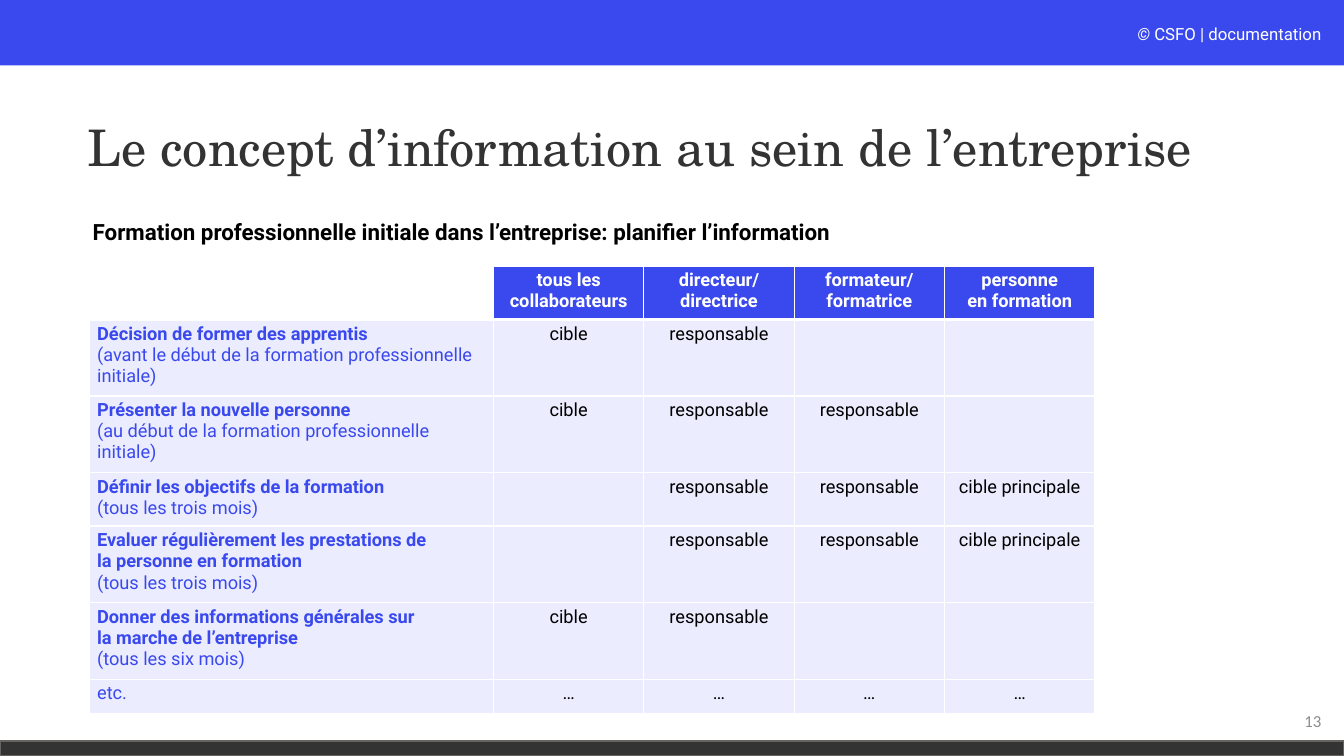
from pptx import Presentation
from pptx import util as u
from pptx.dml.color import RGBColor
from pptx.enum import shapes, text
from pptx.oxml import parse_xml
from pptx.oxml.ns import nsdecls

BLUE = RGBColor(0x3A, 0x49, 0xEE)
PALE = RGBColor(0xEB, 0xEC, 0xFE)
DARK = RGBColor(0x33, 0x33, 0x33)
EDGE = RGBColor(0x66, 0x63, 0x60)
GREY = RGBColor(0x8C, 0x8C, 0x8C)
WHITE = RGBColor(0xFF, 0xFF, 0xFF)
OFF_WHITE = RGBColor(0xFC, 0xFD, 0xFE)
BLACK = RGBColor(0, 0, 0)

LEFT, CENTER, RIGHT = text.PP_ALIGN.LEFT, text.PP_ALIGN.CENTER, text.PP_ALIGN.RIGHT
MIDDLE = text.MSO_ANCHOR.MIDDLE

HEADERS = ["tous les\ncollaborateurs", "directeur/\ndirectrice",
           "formateur/\nformatrice", "personne\nen formation"]
RESP, MAIN = "responsable", "cible principale"
ROWS = [
    ("Décision de former des apprentis",
     "(avant le début de la formation professionnelle initiale)",
     ["cible", RESP, "", ""]),
    ("Présenter la nouvelle personne",
     "(au début de la formation professionnelle initiale)",
     ["cible", RESP, RESP, ""]),
    ("Définir les objectifs de la formation", "(tous les trois mois)",
     ["", RESP, RESP, MAIN]),
    ("Evaluer régulièrement les prestations de\nla personne en formation",
     "(tous les trois mois)", ["", RESP, RESP, MAIN]),
    ("Donner des informations générales sur\nla marche de l’entreprise",
     "(tous les six mois)", ["cible", RESP, "", ""]),
    ("", "etc.", ["…"] * 4),
]
COL_WIDTHS = [288.7] + [107.4] * 4
ROW_HEIGHTS = [38.2, 54.7, 54.7, 38.2, 54.7, 54.7, 24.5]


def write(tf, content, size=13, color=BLACK, bold=False, italic=False,
          font="Roboto", align=LEFT, spacing=None, join=False):
    for line in content.split("\n"):
        p = tf.paragraphs[-1]
        if p.runs and not join:
            p = tf.add_paragraph()
        p.alignment = align
        if spacing:
            p.line_spacing = spacing
        r = p.add_run()
        r.text = line
        r.font.name, r.font.size = font, u.Pt(size)
        r.font.bold, r.font.italic = bold, italic
        r.font.color.rgb = color


class Deck:
    def __init__(self, width, height):
        self.prs = Presentation()
        self.prs.slide_width, self.prs.slide_height = u.Pt(width), u.Pt(height)
        self.s = self.prs.slides.add_slide(self.prs.slide_layouts[6])

    def bar(self, x, y, w, h, fill, line=None):
        sp = self.s.shapes.add_shape(shapes.MSO_SHAPE.RECTANGLE, *map(u.Pt, (x, y, w, h)))
        sp.shadow.inherit = False
        sp.fill.solid()
        sp.fill.fore_color.rgb = fill
        if line:
            sp.line.color.rgb = line
            sp.line.width = u.Pt(1)
        else:
            sp.line.fill.background()

    def box(self, x, y, w, h, content, wrap=True, anchor=None, **fmt):
        tf = self.s.shapes.add_textbox(*map(u.Pt, (x, y, w, h))).text_frame
        tf.word_wrap = wrap
        if anchor is not None:
            tf.vertical_anchor = anchor
        write(tf, content, **fmt)
        return tf

    def cell(self, cell, fill, top=1, bottom=1):
        cell.margin_left = cell.margin_right = u.Pt(5.6)
        cell.margin_top = cell.margin_bottom = u.Pt(2.8)
        tc_pr = cell._tc.get_or_add_tcPr()
        for side, width in zip("LRTB", (1, 1, top, bottom)):
            tc_pr.append(parse_xml(
                f'<a:ln{side} {nsdecls("a")} w="{u.Pt(width)}"><a:solidFill>'
                f'<a:srgbClr val="{WHITE}"/></a:solidFill></a:ln{side}>'))
        if fill is None:
            cell.fill.background()
        else:
            cell.fill.solid()
            cell.fill.fore_color.rgb = fill

    def table(self, x, y, widths, heights):
        frame = self.s.shapes.add_table(
            len(heights), len(widths),
            *map(u.Pt, (x, y, sum(widths), sum(heights))))
        table = frame.table
        table.first_row = table.horz_banding = False
        for col, width in zip(table.columns, widths):
            col.width = u.Pt(width)
        for row, height in zip(table.rows, heights):
            row.height = u.Pt(height)
        return table

    def plan(self, x, y):
        table = self.table(x, y, COL_WIDTHS, ROW_HEIGHTS)
        self.cell(table.cell(0, 0), None, bottom=3)
        for j, header in enumerate(HEADERS, 1):
            c = table.cell(0, j)
            self.cell(c, BLUE, bottom=3)
            write(c.text_frame, header, color=WHITE, bold=True, align=CENTER)
        for i, (step, timing, roles) in enumerate(ROWS, 1):
            for j in range(len(COL_WIDTHS)):
                self.cell(table.cell(i, j), PALE, top=3 if i == 1 else 1)
            tf = table.cell(i, 0).text_frame
            if step:
                write(tf, step, color=BLUE, bold=True)
            write(tf, timing, color=BLUE)
            for j, role in enumerate(roles, 1):
                if role:
                    write(table.cell(i, j).text_frame, role, align=CENTER)


def main():
    d = Deck(960, 540)
    d.bar(0, 0, 960, 46.8, BLUE)
    d.bar(0, 529.2, 960, 10.8, DARK, EDGE)
    tf = d.box(620.6, 13.7, 330.5, 21.6, "© ", size=12, color=OFF_WHITE,
               italic=True, align=RIGHT)
    write(tf, "CSFO | documentation", size=12, color=WHITE, align=RIGHT, join=True)
    d.box(735, 500.4, 216, 28.8, "13", size=12, color=GREY, font="Calibri",
          align=RIGHT, anchor=MIDDLE)
    d.box(55.6, 54.7, 828, 104.4, "Le concept d’information au sein de l’entreprise",
          size=36, color=DARK, font="TeX Gyre Schola", spacing=0.9, anchor=MIDDLE)
    d.plan(63.8, 190)
    d.box(59.2, 152, 583.2, 26.6,
          "Formation professionnelle initiale dans l’entreprise: planifier l’information",
          wrap=False, size=16, bold=True)
    d.prs.save("out.pptx")


if __name__ == "__main__":
    main()
